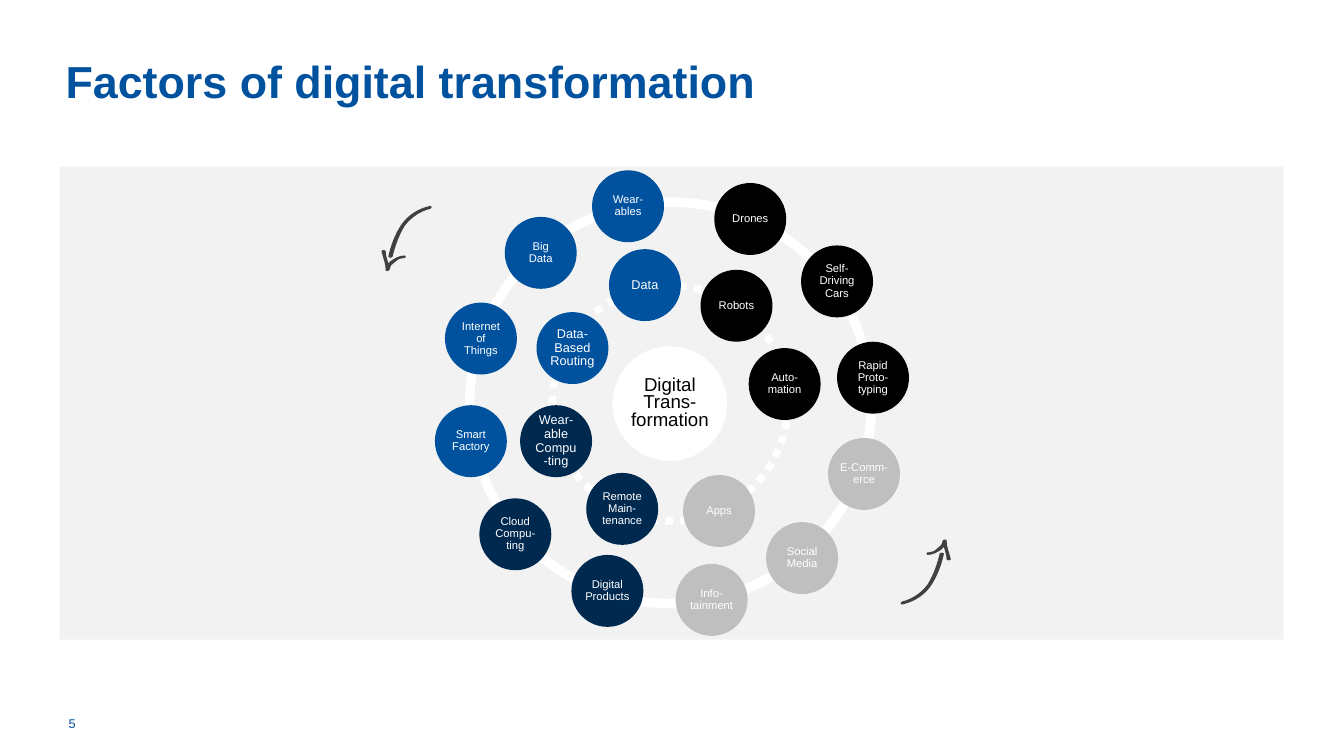
from dataclasses import dataclass

from lxml import etree
from pptx import Presentation
from pptx.dml.color import RGBColor
from pptx.enum.dml import MSO_LINE
from pptx.enum.shapes import MSO_SHAPE
from pptx.enum.text import MSO_ANCHOR, PP_ALIGN
from pptx.oxml.ns import qn
from pptx.util import Cm, Pt

ELLIPSE = MSO_SHAPE.OVAL
DONUT = MSO_SHAPE.DONUT
RECTANGLE = MSO_SHAPE.RECTANGLE
DOTTED = MSO_LINE.ROUND_DOT
MIDDLE = MSO_ANCHOR.MIDDLE
LEFT = PP_ALIGN.LEFT
CENTER = PP_ALIGN.CENTER

BLUE = RGBColor(0x00, 0x52, 0x9F)
NAVY = RGBColor(0x00, 0x29, 0x50)
BLACK = RGBColor(0x00, 0x00, 0x00)
SILVER = RGBColor(0xBF, 0xBF, 0xBF)
PALE = RGBColor(0xF2, 0xF2, 0xF2)
WHITE = RGBColor(0xFF, 0xFF, 0xFF)
CHARCOAL = RGBColor(0x40, 0x40, 0x40)

FONT = "Arial"
NODE_SIZE = 1.36
PADDING = 0.08
PIVOT = (12.59, 7.66)

Point = tuple[float, float]
Curve = tuple[Point, Point, Point]


@dataclass(frozen=True)
class TextStyle:
    size: float
    color: RGBColor
    align: PP_ALIGN = CENTER
    spacing: float = 0.9
    bold: bool = False


@dataclass(frozen=True)
class Node:
    label: str
    left: float
    top: float
    color: RGBColor
    inset: float = 0
    size: float = 6


@dataclass(frozen=True)
class Outline:
    start: Point
    curves: tuple[Curve, ...]


NODES = (
    Node("Data", 11.51, 4.71, BLUE, PADDING, 6.8),
    Node("Data-Based Routing", 10.14, 5.9, BLUE, size=6.8),
    Node("Wear-able Compu-ting", 9.83, 7.66, NAVY, PADDING, 6.8),
    Node("Remote Main-tenance", 11.08, 8.94, NAVY, PADDING),
    Node("Apps", 12.91, 8.98, SILVER, PADDING),
    Node("Auto-mation", 14.15, 6.58, BLACK),
    Node("Robots", 13.24, 5.1, BLACK, PADDING),
    Node("Wear-ables", 11.19, 3.22, BLUE),
    Node("Big Data", 9.54, 4.1, BLUE, PADDING),
    Node("Internet of Things", 8.41, 5.72, BLUE, PADDING),
    Node("Smart\nFactory", 8.22, 7.66, BLUE, PADDING),
    Node("Cloud Compu-ting", 9.06, 9.42, NAVY, PADDING),
    Node("Digital Products", 10.8, 10.49, NAVY),
    Node("Info-\ntainment", 12.77, 10.66, SILVER),
    Node("Social Media", 14.48, 9.87, SILVER, PADDING),
    Node("E-Comm-erce", 15.65, 8.28, SILVER),
    Node("Rapid Proto-typing", 15.82, 6.46, BLACK),
    Node("Self-Driving Cars", 15.14, 4.64, BLACK),
    Node("Drones", 13.5, 3.46, BLACK),
)

SHAFT = Outline((7.42, 4.85), (
    ((7.47, 4.65), (7.54, 4.45), (7.65, 4.27)),
    ((7.77, 4.11), (7.95, 3.99), (8.13, 3.95)),
    ((8.15, 3.95), (8.18, 3.9), (8.15, 3.9)),
    ((8.15, 3.89), (8.13, 3.89), (8.1, 3.9)),
    ((7.9, 3.95), (7.72, 4.06), (7.59, 4.24)),
    ((7.47, 4.42), (7.39, 4.62), (7.34, 4.85)),
    ((7.34, 4.88), (7.42, 4.88), (7.42, 4.85)),
))
HEAD = Outline((7.29, 5.11), (
    ((7.29, 4.98), (7.24, 4.88), (7.21, 4.75)),
    ((7.21, 4.72), (7.29, 4.72), (7.29, 4.75)),
    ((7.29, 4.83), (7.32, 4.9), (7.34, 4.98)),
    ((7.37, 4.95), (7.39, 4.93), (7.39, 4.93)),
    ((7.47, 4.88), (7.54, 4.83), (7.65, 4.83)),
    ((7.65, 4.83), (7.67, 4.83), (7.67, 4.85)),
    ((7.67, 4.88), (7.65, 4.88), (7.62, 4.88)),
    ((7.57, 4.88), (7.52, 4.9), (7.47, 4.95)),
    ((7.42, 4.98), (7.37, 5.03), (7.37, 5.08)),
    ((7.37, 5.13), (7.29, 5.13), (7.29, 5.11)),
))


def write(box, text: str, style: TextStyle, insets=(0, 0, 0, 0)) -> None:
    frame = box.text_frame
    frame.word_wrap = True
    frame.vertical_anchor = MIDDLE
    frame.margin_left, frame.margin_top, frame.margin_right, frame.margin_bottom = map(Cm, insets)
    para = frame.paragraphs[0]
    para.alignment = style.align
    para.line_spacing = style.spacing
    for index, line in enumerate(text.split("\n")):
        if index:
            para.add_line_break()
        span = para.add_run()
        span.text = line
        span.font.name = FONT
        span.font.size = Pt(style.size)
        span.font.bold = style.bold
        span.font.color.rgb = style.color


def paint(shape, color: RGBColor) -> None:
    shape.shadow.inherit = False
    shape.fill.solid()
    shape.fill.fore_color.rgb = color
    shape.line.fill.background()


def add_figure(page, kind: MSO_SHAPE, left: float, top: float, width: float, height: float, color: RGBColor):
    shape = page.shapes.add_shape(kind, Cm(left), Cm(top), Cm(width), Cm(height))
    paint(shape, color)
    return shape


def add_label(page, text: str, bounds: tuple, style: TextStyle, insets=(0, 0, 0, 0)) -> None:
    write(page.shapes.add_textbox(*map(Cm, bounds)), text, style, insets)


def add_node(page, node: Node) -> None:
    circle = add_figure(page, ELLIPSE, node.left, node.top, NODE_SIZE, NODE_SIZE, node.color)
    write(circle, node.label, TextStyle(node.size, WHITE), (node.inset,) * 4)


def locate(point: Point, half_turn: bool) -> tuple[Cm, Cm]:
    if half_turn:
        point = (2 * PIVOT[0] - point[0], 2 * PIVOT[1] - point[1])
    return Cm(point[0]), Cm(point[1])


def bend(shape, curves: tuple[Curve, ...], half_turn: bool) -> None:
    segments = list(shape.element.iter(qn("a:lnTo")))
    for segment, curve in zip(segments, curves):
        bezier = etree.Element(qn("a:cubicBezTo"))
        for point in curve:
            x, y = locate(point, half_turn)
            etree.SubElement(bezier, qn("a:pt"), x=str(x - shape.left), y=str(y - shape.top))
        segment.getparent().replace(segment, bezier)


def add_arrow(page, half_turn: bool) -> None:
    builder = page.shapes.build_freeform(*locate(SHAFT.start, half_turn))
    for outline in (SHAFT, HEAD):
        if outline is HEAD:
            builder.move_to(*locate(outline.start, half_turn))
        builder.add_line_segments([locate(curve[-1], half_turn) for curve in outline.curves])
    arrow = builder.convert_to_shape()
    bend(arrow, SHAFT.curves + HEAD.curves, half_turn)
    paint(arrow, CHARCOAL)


def main() -> None:
    deck = Presentation()
    deck.slide_width, deck.slide_height = Cm(25.4), Cm(14.29)
    page = deck.slides.add_slide(deck.slide_layouts[6])

    title_style = TextStyle(24, BLUE, LEFT, 1, True)
    add_label(page, "Factors of digital transformation", (1.24, 0.4, 20.07, 2.26), title_style)
    add_figure(page, RECTANGLE, 1.13, 3.15, 23.13, 8.94, PALE)

    outer_ring = add_figure(page, DONUT, 8.79, 3.73, 7.77, 7.77, WHITE)
    outer_ring.adjustments[0] = 0.023
    inner_ring = add_figure(page, DONUT, 10.44, 5.4, 4.45, 4.45, PALE)
    inner_ring.adjustments[0] = 0.318
    inner_ring.fill.background()
    inner_ring.line.color.rgb = WHITE
    inner_ring.line.width = Pt(4)
    inner_ring.line.dash_style = DOTTED

    for node in NODES:
        add_node(page, node)

    hub = add_figure(page, ELLIPSE, 11.54, 6.51, 2.24, 2.24, WHITE)
    hub.line.color.rgb = PALE
    hub.line.width = Pt(2)
    write(hub, "Digital\nTrans-formation", TextStyle(10, BLACK, spacing=0.8))

    for half_turn in (False, True):
        add_arrow(page, half_turn)
    add_label(page, "5", (1.3, 13.3, 2.08, 0.76), TextStyle(6.8, BLUE, LEFT, 1), (0, 0.13, 0.25, 0.13))
    deck.save("out.pptx")


if __name__ == "__main__":
    main()
